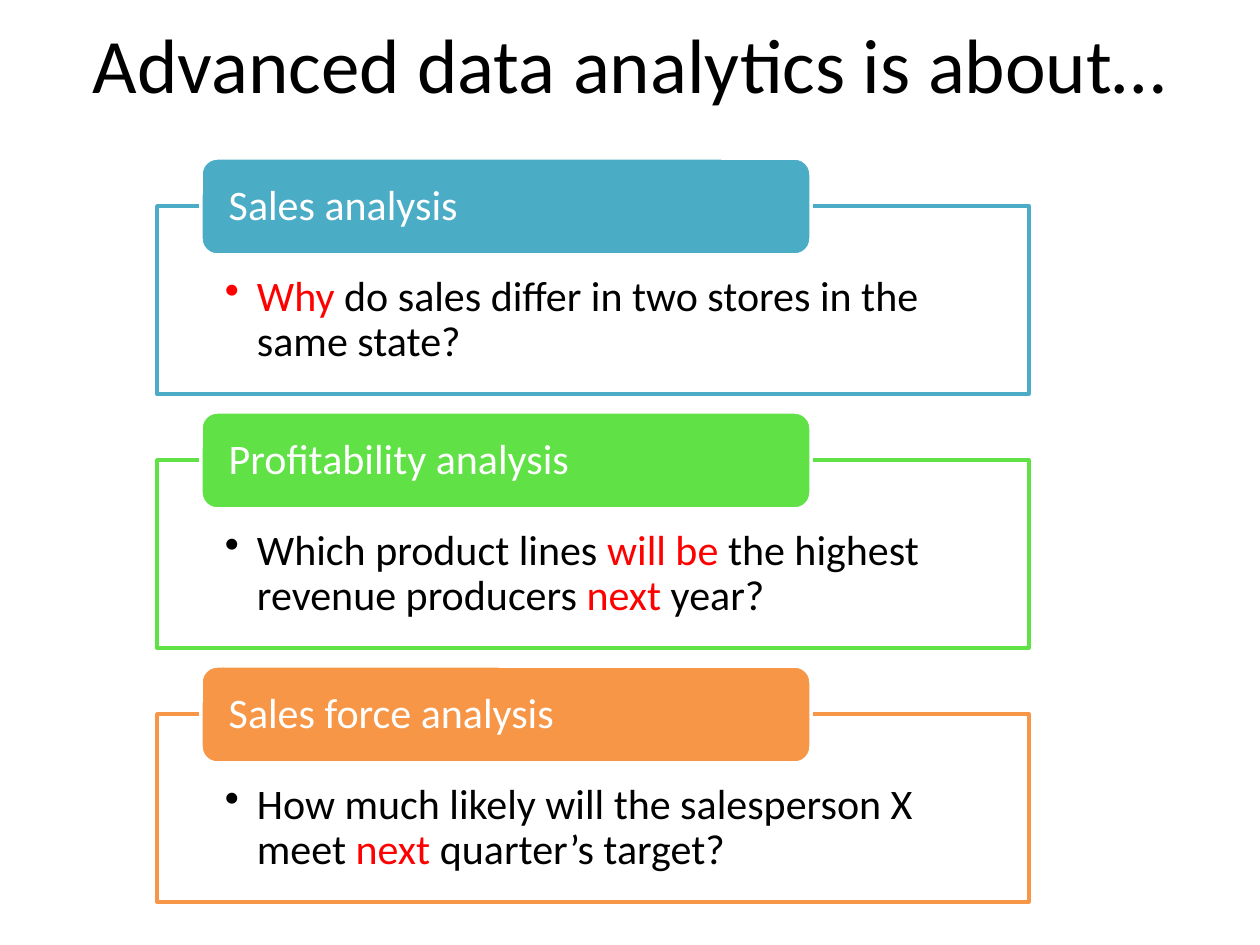
"""Build a slide listing three kinds of sales question under coloured headers."""
from dataclasses import dataclass

from lxml import etree
from pptx import Presentation
from pptx.dml.color import RGBColor
from pptx.enum.shapes import MSO_SHAPE
from pptx.enum.text import MSO_ANCHOR, PP_ALIGN
from pptx.oxml.ns import qn
from pptx.shapes.autoshape import Shape
from pptx.slide import Slide
from pptx.text.text import TextFrame, _Paragraph
from pptx.util import Emu, Pt

RECTANGLE = MSO_SHAPE.RECTANGLE
ROUNDED = MSO_SHAPE.ROUNDED_RECTANGLE
TOP, MIDDLE = MSO_ANCHOR.TOP, MSO_ANCHOR.MIDDLE
LEFT, CENTER = PP_ALIGN.LEFT, PP_ALIGN.CENTER
PX_PER_INCH = 126
EMU_PER_INCH = 914400
FIRST_TOP, PITCH = 206, 254
HEADER_RISE = 48
BULLET_INDENT = 32


@dataclass(frozen=True)
class Theme:
    font: str = "Calibri"
    title_size: int = 44
    body_size: int = 24
    line_width: int = 2
    line_spacing: float = 0.9
    frame_opacity: int = 90
    text: str = "000000"
    accent: str = "FF0000"
    paper: str = "FFFFFF"


@dataclass(frozen=True)
class Box:
    left: int
    top: int
    width: int
    height: int


@dataclass(frozen=True)
class Piece:
    text: str
    accent: bool = False


@dataclass(frozen=True)
class Topic:
    header: str
    color: str
    question: tuple[Piece, ...]


THEME = Theme()
TOPICS = (
    Topic("Sales analysis", "4BACC6", (
        Piece("Why", True),
        Piece(" do sales differ in two stores in the same state?"),
    )),
    Topic("Profitability analysis", "60E146", (
        Piece("Which product lines "),
        Piece("will be", True),
        Piece(" the highest revenue producers "),
        Piece("next", True),
        Piece(" year?"),
    )),
    Topic("Sales force analysis", "F79646", (
        Piece("How much likely will the salesperson X meet "),
        Piece("next", True),
        Piece(" quarter’s target?"),
    )),
)


def px(length: int) -> Emu:
    return Emu(round(length * EMU_PER_INCH / PX_PER_INCH))


def place(box: Box) -> tuple[Emu, Emu, Emu, Emu]:
    return px(box.left), px(box.top), px(box.width), px(box.height)


def add_run(paragraph: _Paragraph, text: str, size: int, color: str) -> None:
    run = paragraph.add_run()
    run.text = text
    run.font.name = THEME.font
    run.font.size = Pt(size)
    run.font.color.rgb = RGBColor.from_string(color)


def set_frame(frame: TextFrame, anchor: MSO_ANCHOR, side: int, top: int, bottom: int) -> None:
    frame.word_wrap = True
    frame.vertical_anchor = anchor
    frame.margin_left = frame.margin_right = px(side)
    frame.margin_top, frame.margin_bottom = px(top), px(bottom)


def add_panel(slide: Slide, kind: MSO_SHAPE, box: Box, fill: str, line: str) -> Shape:
    shape = slide.shapes.add_shape(kind, *place(box))
    shape.shadow.inherit = False
    shape.fill.solid()
    shape.fill.fore_color.rgb = RGBColor.from_string(fill)
    shape.line.color.rgb = RGBColor.from_string(line)
    shape.line.width = Pt(THEME.line_width)
    return shape


def set_opacity(shape: Shape, percent: int) -> None:
    color = shape._element.spPr.find(qn("a:solidFill")).find(qn("a:srgbClr"))
    etree.SubElement(color, qn("a:alpha")).set("val", str(percent * 1000))


def set_bullet(paragraph: _Paragraph) -> None:
    properties = paragraph._p.get_or_add_pPr()
    properties.set("marL", str(px(BULLET_INDENT)))
    properties.set("indent", str(-px(BULLET_INDENT)))
    etree.SubElement(properties, qn("a:buChar")).set("char", "•")


def first_paragraph(shape: Shape) -> _Paragraph:
    paragraph = shape.text_frame.paragraphs[0]
    paragraph.alignment = LEFT
    paragraph.line_spacing = THEME.line_spacing
    return paragraph


def add_title(slide: Slide, text: str) -> None:
    title = slide.shapes.add_textbox(*place(Box(63, 0, 1134, 126)))
    set_frame(title.text_frame, MIDDLE, 13, 6, 6)
    paragraph = title.text_frame.paragraphs[0]
    paragraph.alignment = CENTER
    add_run(paragraph, text, THEME.title_size, THEME.text)


def add_topic(slide: Slide, topic: Topic, top: int) -> None:
    panel = add_panel(slide, RECTANGLE, Box(157, top, 872, 188), THEME.paper, topic.color)
    set_opacity(panel, THEME.frame_opacity)
    set_frame(panel.text_frame, TOP, 68, 69, 24)
    question = first_paragraph(panel)
    question.level = 1
    set_bullet(question)
    for piece in topic.question:
        color = THEME.accent if piece.accent else THEME.text
        add_run(question, piece.text, THEME.body_size, color)

    header_box = Box(201, top - HEADER_RISE, 610, 97)
    header = add_panel(slide, ROUNDED, header_box, topic.color, THEME.paper)
    set_frame(header.text_frame, MIDDLE, 23, 0, 0)
    add_run(first_paragraph(header), topic.header, THEME.body_size, THEME.paper)


def main() -> None:
    presentation = Presentation()
    presentation.slide_width, presentation.slide_height = px(1260), px(945)
    slide = presentation.slides.add_slide(presentation.slide_layouts[6])
    add_title(slide, "Advanced data analytics is about…")
    for index, topic in enumerate(TOPICS):
        add_topic(slide, topic, FIRST_TOP + index * PITCH)
    presentation.save("out.pptx")


if __name__ == "__main__":
    main()
